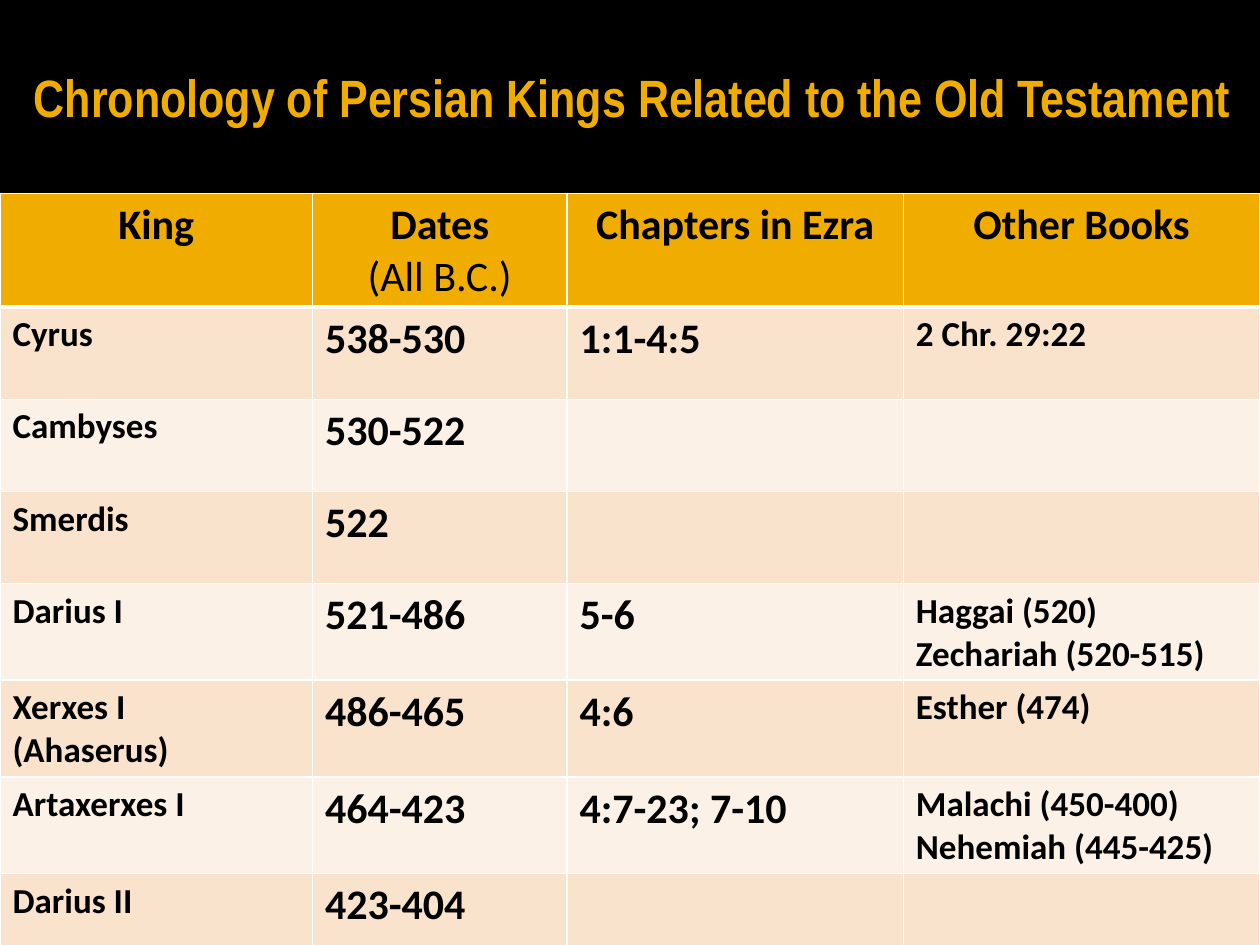
from dataclasses import dataclass
from pptx import Presentation, util as u
from pptx.dml.color import RGBColor
from pptx.enum import shapes, text
from pptx.oxml import parse_xml
from pptx.oxml.ns import nsdecls


@dataclass(frozen=True)
class Theme:
    gold: str = "F0AD00"
    black: str = "000000"
    white: str = "FFFFFF"
    bands: tuple[str, str] = ("F9E3CC", "FCF1E7")
    title_font: str = "Arial Narrow"
    body_font: str = "Calibri"
    title: int = 30
    large: int = 24
    small: int = 20
    rule: int = 1
    header_rule: int = 3


@dataclass(frozen=True)
class Reign:
    king: str
    dates: str
    ezra: str = ""
    books: str = ""


T = Theme()
WIDTH, HEIGHT = u.Inches(10), u.Inches(7.5)
BANNER, TABLE_TOP = 0.21, 0.205
COLUMNS = (0.248, 0.202, 0.267, 0.283)
HEADER_ROW, BODY_ROW = 0.12, 0.0975
HEADERS = ("King", "Dates\n(All B.C.)", "Chapters in Ezra", "Other Books")
REIGNS = (
    Reign("Cyrus", "538-530", "1:1-4:5", "2 Chr. 29:22"),
    Reign("Cambyses", "530-522"),
    Reign("Smerdis", "522"),
    Reign("Darius I", "521-486", "5-6", "Haggai (520)\nZechariah (520-515)"),
    Reign("Xerxes I\v(Ahaserus)", "486-465", "4:6", "Esther (474)"),
    Reign("Artaxerxes I", "464-423", "4:7-23; 7-10",
          "Malachi (450-400)\nNehemiah (445-425)"),
    Reign("Darius II", "423-404"),
)


def style(r, font: str, size: int, color: str, bold: bool = True) -> None:
    for name, value in dict(name=font, size=u.Pt(size), bold=bold).items():
        setattr(r.font, name, value)
    r.font.color.rgb = RGBColor.from_string(color)


def draw_banner(s, title: str) -> None:
    sp = s.shapes.add_shape(shapes.MSO_SHAPE.RECTANGLE, 0, 0, WIDTH, int(HEIGHT * BANNER))
    sp.shadow.inherit = False
    sp.fill.solid()
    sp.fill.fore_color.rgb = RGBColor.from_string(T.black)
    sp.line.fill.background()
    left = int(WIDTH * 0.017)
    tf = s.shapes.add_textbox(left, 0, WIDTH - left, int(HEIGHT * TABLE_TOP)).text_frame
    layout = dict(word_wrap=True, vertical_anchor=text.MSO_ANCHOR.MIDDLE,
                  margin_left=u.Inches(0.1), margin_right=u.Inches(0.05))
    for name, value in layout.items():
        setattr(tf, name, value)
    r = tf.paragraphs[0].add_run()
    r.text = title
    style(r, T.title_font, T.title, T.gold)


def set_borders(cell, top: int, bottom: int) -> None:
    for side, width in dict(L=T.rule, R=T.rule, T=top, B=bottom).items():
        cell._tc.get_or_add_tcPr().append(parse_xml(
            f'<a:ln{side} {nsdecls("a")} w="{u.Pt(width)}"><a:solidFill>'
            f'<a:srgbClr val="{T.white}"/></a:solidFill></a:ln{side}>'))


def fill_cell(cell, content: str, row: int, col: int) -> None:
    header = row == 0
    set_borders(cell, T.header_rule if row == 1 else T.rule,
                T.header_rule if header else T.rule)
    cell.fill.solid()
    cell.fill.fore_color.rgb = RGBColor.from_string(
        T.gold if header else T.bands[(row - 1) % 2])
    if not content:
        return
    cell.text = content
    size = T.large if header or col in (1, 2) else T.small
    for i, p in enumerate(cell.text_frame.paragraphs):
        p.alignment = text.PP_ALIGN.CENTER if header else text.PP_ALIGN.LEFT
        for r in p.runs:
            style(r, T.body_font, size, T.black, not (header and i))


def draw_table(s) -> None:
    rows = [HEADERS] + [(k.king, k.dates, k.ezra, k.books) for k in REIGNS]
    heights = [HEADER_ROW] + [BODY_ROW] * len(REIGNS)
    table = s.shapes.add_table(len(rows), len(COLUMNS), 0, int(HEIGHT * TABLE_TOP),
                               WIDTH, int(HEIGHT * sum(heights))).table
    for column, share in zip(table.columns, COLUMNS):
        column.width = int(WIDTH * share)
    for i, (row, share) in enumerate(zip(rows, heights)):
        table.rows[i].height = int(HEIGHT * share)
        for j, content in enumerate(row):
            fill_cell(table.cell(i, j), content, i, j)


def main() -> None:
    prs = Presentation()
    prs.slide_width, prs.slide_height = WIDTH, HEIGHT
    s = prs.slides.add_slide(prs.slide_layouts[6])
    draw_banner(s, "Chronology of Persian Kings Related to the Old Testament")
    draw_table(s)
    prs.save("out.pptx")


if __name__ == "__main__":
    main()
